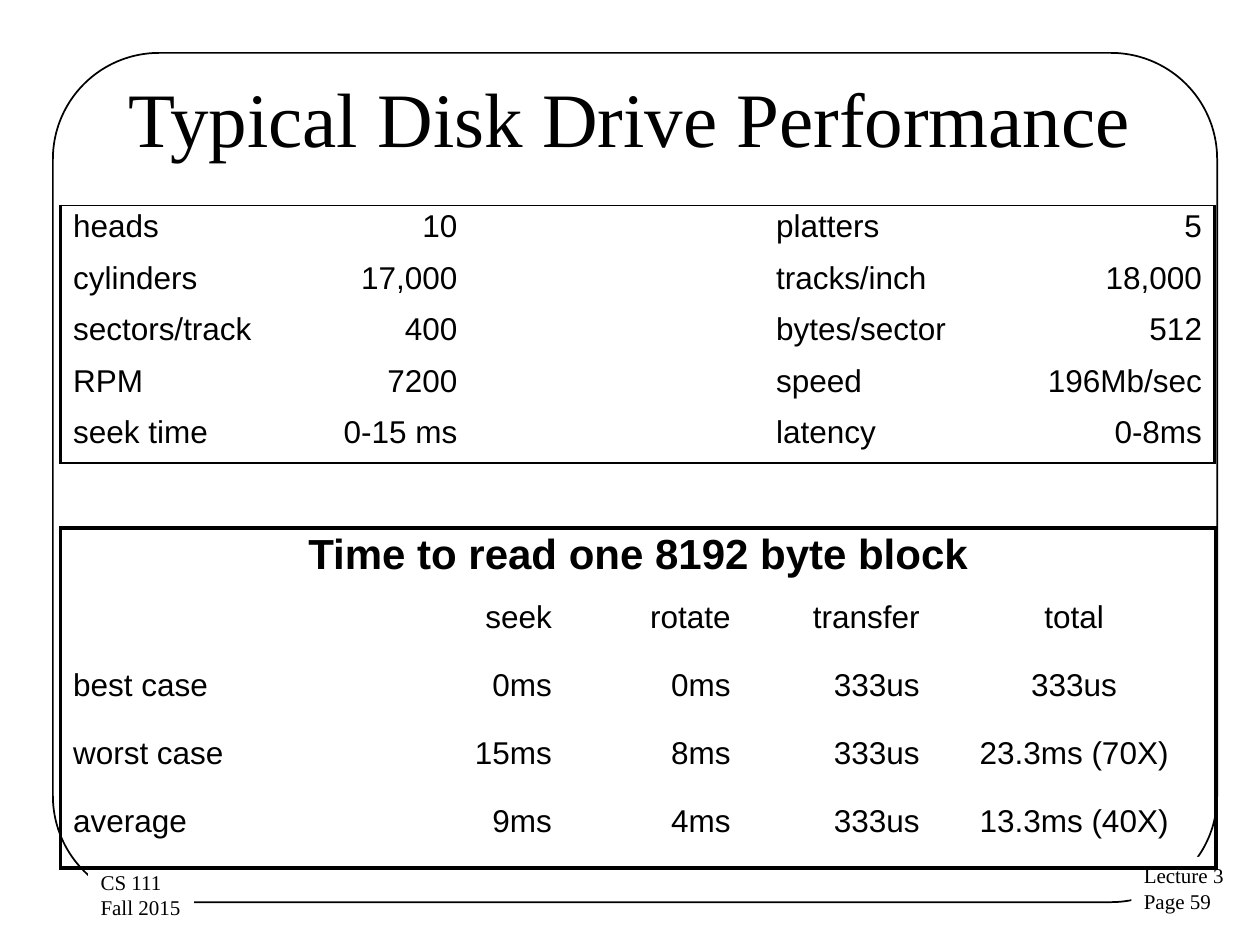
"""Build the slide on typical disk drive performance."""
import pptx
import pptx.dml.color
import pptx.enum.shapes
import pptx.enum.text
import pptx.oxml
import pptx.oxml.ns
import pptx.util
from pptx.util import Inches

BLACK = pptx.dml.color.RGBColor(0, 0, 0)
WHITE = pptx.dml.color.RGBColor(255, 255, 255)
ALIGN = pptx.enum.text.PP_ALIGN
LEFT, CENTER, RIGHT = ALIGN.LEFT, ALIGN.CENTER, ALIGN.RIGHT


def write(paragraph, text, font="Times New Roman", size=12, bold=False, align=LEFT, in_table=False):
    run = paragraph.add_run()
    run.text = text
    run.font.name = font
    run.font.size = pptx.util.Pt(size)
    run.font.bold = bold
    run.font.color.rgb = BLACK
    paragraph.alignment = align
    if in_table:
        paragraph.line_spacing = 0.93
        paragraph.space_after = pptx.util.Pt(14.1)
        properties = paragraph._p.get_or_add_pPr()
        properties.set("marL", str(Inches(0.12)))
        properties.set("indent", str(Inches(-0.12)))


def set_border(cell, side, width):
    paint = f'<a:solidFill><a:srgbClr val="{BLACK}"/></a:solidFill>' if width else "<a:noFill/>"
    cell._tc.get_or_add_tcPr().append(pptx.oxml.parse_xml(
        f'<a:ln{side} {pptx.oxml.ns.nsdecls("a")} w="{int(pptx.util.Pt(width))}">{paint}</a:ln{side}>'))


deck = pptx.Presentation()
deck.slide_width, deck.slide_height = Inches(10), Inches(7.5)
slide = deck.slides.add_slide(deck.slide_layouts[5])

frame = slide.shapes.add_shape(pptx.enum.shapes.MSO_SHAPE.ROUNDED_RECTANGLE,
                               Inches(0.42), Inches(0.42), Inches(9.24), Inches(6.74))
frame.adjustments[0] = 0.125
frame.shadow.inherit = False
frame.fill.background()
frame.line.color.rgb = BLACK
frame.line.width = pptx.util.Pt(1)

for left, top, lines in [(8.98, 6.8, ("Lecture 3", "Page 59")),
                         (0.7, 6.85, ("CS 111", "Fall 2015"))]:
    corner_label = slide.shapes.add_textbox(Inches(left), Inches(top), Inches(0.84), Inches(0.51))
    corner_label.fill.solid()
    corner_label.fill.fore_color.rgb = WHITE
    label_text = corner_label.text_frame
    label_text.word_wrap = False
    label_text.auto_size = pptx.enum.text.MSO_AUTO_SIZE.SHAPE_TO_FIT_TEXT
    write(label_text.paragraphs[0], lines[0])
    write(label_text.add_paragraph(), lines[1])

heading = slide.shapes.title
heading.element.getparent().append(heading.element)
heading.left, heading.top = Inches(0.5), Inches(0.3)
heading.width, heading.height = Inches(9), Inches(1.25)
heading.text_frame.vertical_anchor = pptx.enum.text.MSO_ANCHOR.MIDDLE
write(heading.text_frame.paragraphs[0], "Typical Disk Drive Performance", size=44, align=CENTER)

drive_specs = [
    ["heads", "10", "", "platters", "5"],
    ["cylinders", "17,000", "", "tracks/inch", "18,000"],
    ["sectors/track", "400", "", "bytes/sector", "512"],
    ["RPM", "7200", "", "speed", "196Mb/sec"],
    ["seek time", "0-15 ms", "", "latency", "0-8ms"],
]
read_times = [
    ["Time to read one 8192 byte block", "", "", "", ""],
    ["", "seek", "rotate", "transfer", "total"],
    ["best case", "0ms", "0ms", "333us", "333us"],
    ["worst case", "15ms", "8ms", "333us", "23.3ms (70X)"],
    ["average", "9ms", "4ms", "333us", "13.3ms (40X)"],
]
tables = [
    (drive_specs, 1.63, [1.79, 1.46, 2.33, 2.03, 1.55], [0.3] + [0.41] * 4,
     [LEFT, RIGHT, LEFT, LEFT, RIGHT], 1, False),
    (read_times, 4.19, [2.58, 1.42, 1.42, 1.5, 2.25], [0.54] * 5,
     [LEFT, RIGHT, RIGHT, RIGHT, CENTER], 2.25, True),
]
for rows, top, widths, heights, aligns, edge_width, has_banner in tables:
    grid = slide.shapes.add_table(len(rows), len(widths), Inches(0.48), Inches(top),
                                  Inches(sum(widths)), Inches(sum(heights))).table
    grid.first_row = grid.horz_banding = False
    for column, width in zip(grid.columns, widths):
        column.width = Inches(width)
    for row, height in zip(grid.rows, heights):
        row.height = Inches(height)
    if has_banner:
        grid.cell(0, 0).merge(grid.cell(0, len(widths) - 1))
    for r, values in enumerate(rows):
        for c, value in enumerate(values):
            cell = grid.cell(r, c)
            banner = has_banner and r == 0
            set_border(cell, "L", 2.25 if c == 0 else 0)
            set_border(cell, "R", 2.25 if banner or c == len(widths) - 1 else 0)
            set_border(cell, "T", edge_width if r == 0 else 0)
            set_border(cell, "B", edge_width if r == len(rows) - 1 else 0)
            cell.fill.background()
            if value:
                write(cell.text_frame.paragraphs[0], value, font="Arial", size=24 if banner else 18,
                      bold=banner, align=CENTER if banner else aligns[c], in_table=True)

deck.save("out.pptx")
